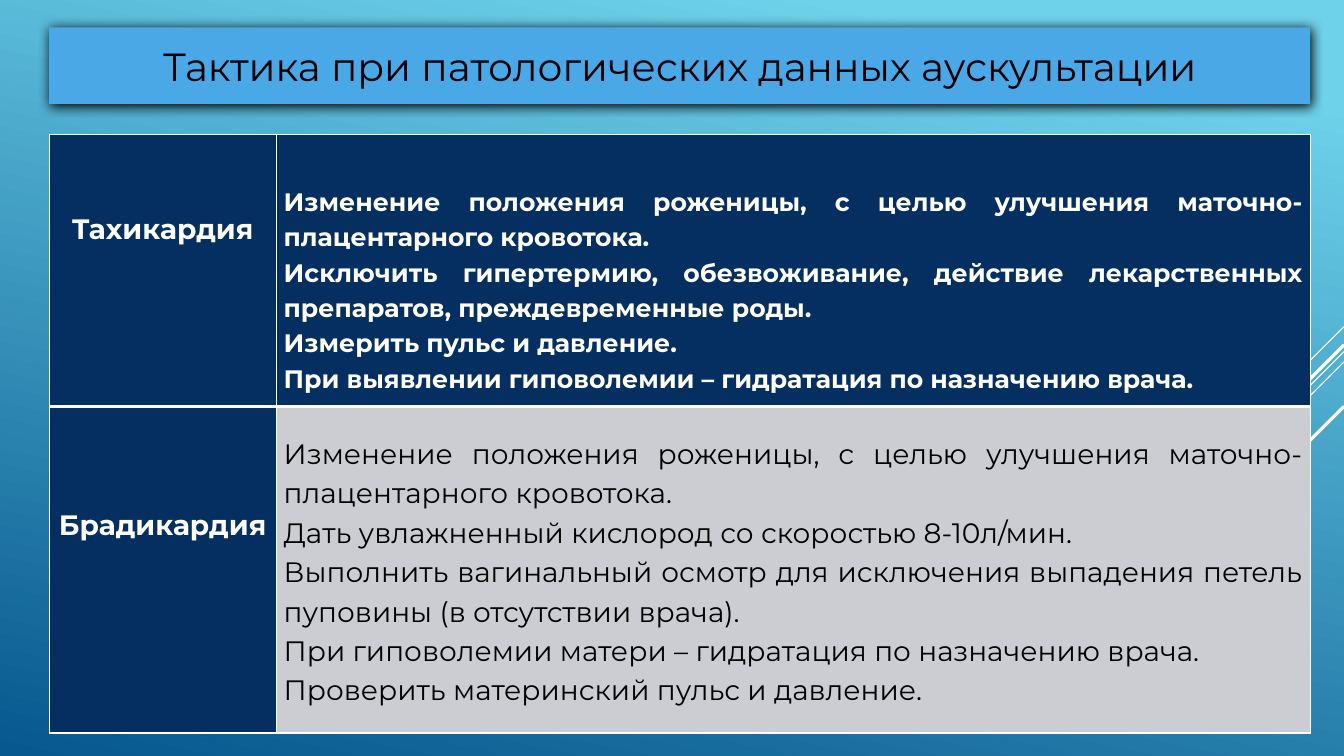
from dataclasses import dataclass

from lxml import etree
from pptx import Presentation
from pptx import util as u
from pptx.dml.color import RGBColor
from pptx.enum import shapes, text
from pptx.oxml import ns, parse_xml

FONT = "Montserrat"
WHITE = RGBColor(0xFF, 0xFF, 0xFF)
BLACK = RGBColor(0x00, 0x00, 0x00)
NAVY = RGBColor(0x05, 0x2F, 0x61)
GREY = RGBColor(0xCC, 0xCD, 0xD2)
TITLE_BLUE = RGBColor(0x4A, 0xA8, 0xE7)
SKY = RGBColor(0x6E, 0xD2, 0xEB)
DEEP_BLUE = RGBColor(0x06, 0x58, 0x8E)

SLIDE_W, SLIDE_H = 33.87, 19.05
LEFT, WIDTH = 1.24, 31.78
COLUMNS = (5.72, 26.06)
ROWS = (6.86, 8.23)


@dataclass
class Ray:
    """A 45 degree line running down and left from the right edge."""
    top: float
    reach: float
    weight: float


@dataclass
class CellText:
    lines: list[str]
    top: float
    size: int
    align: text.PP_ALIGN = text.PP_ALIGN.JUSTIFY
    fill: RGBColor = NAVY
    color: RGBColor = WHITE
    bold: bool = True


RAYS = [
    Ray(8.23, 2.54, 0.75),
    Ray(8.86, 8.28, 0.75),
    Ray(9.12, 5.27, 0.75),
    Ray(8.69, 4.85, 2.25),
    Ray(10.24, 3.53, 2.25),
]

CENTER = text.PP_ALIGN.CENTER
CELLS = [
    [
        CellText(["Тахикардия"], 1.83, 20, CENTER),
        CellText([
            "Изменение положения роженицы, с целью улучшения маточно-плацентарного кровотока.",
            "Исключить гипертермию, обезвоживание, действие лекарственных препаратов, "
            "преждевременные роды.",
            "Измерить пульс и давление.",
            "При выявлении гиповолемии – гидратация по назначению врача.",
        ], 1.22, 18),
    ],
    [
        CellText(["Брадикардия"], 2.43, 20, CENTER),
        CellText([
            "Изменение положения роженицы, с целью улучшения маточно-плацентарного кровотока.",
            "Дать увлажненный кислород со скоростью 8-10л/мин.",
            "Выполнить вагинальный осмотр для исключения выпадения петель пуповины "
            "(в отсутствии врача).",
            "При гиповолемии матери – гидратация по назначению врача.",
            "Проверить материнский пульс и давление.",
        ], 0.65, 20, fill=GREY, color=BLACK, bold=False),
    ],
]


def style_run(r, size: int, color: RGBColor, bold: bool) -> None:
    for name, value in {"name": FONT, "size": u.Pt(size), "bold": bold}.items():
        setattr(r.font, name, value)
    r.font.color.rgb = color


def draw_ray(s, ray: Ray) -> None:
    line = s.shapes.add_connector(
        shapes.MSO_CONNECTOR.STRAIGHT, u.Cm(SLIDE_W), u.Cm(ray.top),
        u.Cm(SLIDE_W - ray.reach), u.Cm(ray.top + ray.reach))
    line.line.color.rgb = WHITE
    line.line.width = u.Pt(ray.weight)
    etree.SubElement(line._element.spPr, ns.qn("a:effectLst"))


def set_borders(cell, bottom: float) -> None:
    tc_pr = cell._tc.get_or_add_tcPr()
    weights = {"lnL": 1, "lnR": 1, "lnT": 1, "lnB": bottom}
    for i, (side, weight) in enumerate(weights.items()):
        tc_pr.insert(i, parse_xml(
            f'<a:{side} {ns.nsdecls("a")} w="{int(u.Pt(weight))}"><a:solidFill>'
            f'<a:srgbClr val="{WHITE}"/></a:solidFill></a:{side}>'))


def fill_cell(cell, spec_text: CellText, bottom: float) -> None:
    cell.fill.solid()
    cell.fill.fore_color.rgb = spec_text.fill
    set_borders(cell, bottom)
    margins = {"margin_left": 0.19, "margin_right": 0.19,
               "margin_top": spec_text.top, "margin_bottom": 0}
    for name, value in margins.items():
        setattr(cell, name, u.Cm(value))
    tf = cell.text_frame
    for i, line in enumerate(spec_text.lines):
        p = tf.paragraphs[0] if i == 0 else tf.add_paragraph()
        p.alignment = spec_text.align
        p.line_spacing = 1.15
        r = p.add_run()
        r.text = line
        style_run(r, spec_text.size, spec_text.color, spec_text.bold)


def draw_title(s) -> None:
    sp = s.shapes.title
    box = {"left": LEFT, "top": 0.69, "width": WIDTH, "height": 1.93}
    for name, value in box.items():
        setattr(sp, name, u.Cm(value))
    sp.fill.solid()
    sp.fill.fore_color.rgb = TITLE_BLUE
    sp._element.spPr.append(parse_xml(
        f'<a:effectLst {ns.nsdecls("a")}><a:outerShdw blurRad="{int(u.Pt(8.5))}" '
        f'dist="{int(u.Pt(1))}" dir="5400000" algn="ctr" rotWithShape="0">'
        f'<a:srgbClr val="{BLACK}"/></a:outerShdw></a:effectLst>'))
    tf = sp.text_frame
    frame = {"auto_size": text.MSO_AUTO_SIZE.NONE, "word_wrap": True,
             "vertical_anchor": text.MSO_ANCHOR.MIDDLE}
    for name, value in frame.items():
        setattr(tf, name, value)
    p = tf.paragraphs[0]
    p.alignment = CENTER
    r = p.add_run()
    r.text = "Тактика при патологических данных аускультации"
    style_run(r, 28, BLACK, False)


def draw_table(s) -> None:
    table = s.shapes.add_table(
        len(ROWS), len(COLUMNS), u.Cm(LEFT), u.Cm(3.38),
        u.Cm(WIDTH), u.Cm(sum(ROWS))).table
    table.first_row = table.horz_banding = False
    for column, width in zip(table.columns, COLUMNS):
        column.width = u.Cm(width)
    for row, height, texts, bottom in zip(table.rows, ROWS, CELLS, (3, 1)):
        row.height = u.Cm(height)
        for cell, cell_text in zip(row.cells, texts):
            fill_cell(cell, cell_text, bottom)


def main() -> None:
    prs = Presentation()
    prs.slide_width, prs.slide_height = u.Cm(SLIDE_W), u.Cm(SLIDE_H)
    s = prs.slides.add_slide(prs.slide_layouts[5])

    # Background gradient
    fill = s.background.fill
    fill.gradient()
    fill.gradient_angle = 360 - 102
    for stop, position, color in zip(fill.gradient_stops, (0.1, 1), (SKY, DEEP_BLUE)):
        stop.position = position
        stop.color.rgb = color

    # Decorative rays behind the table
    for ray in RAYS:
        draw_ray(s, ray)

    # Title and table
    draw_title(s)
    draw_table(s)
    prs.save("out.pptx")


if __name__ == "__main__":
    main()
